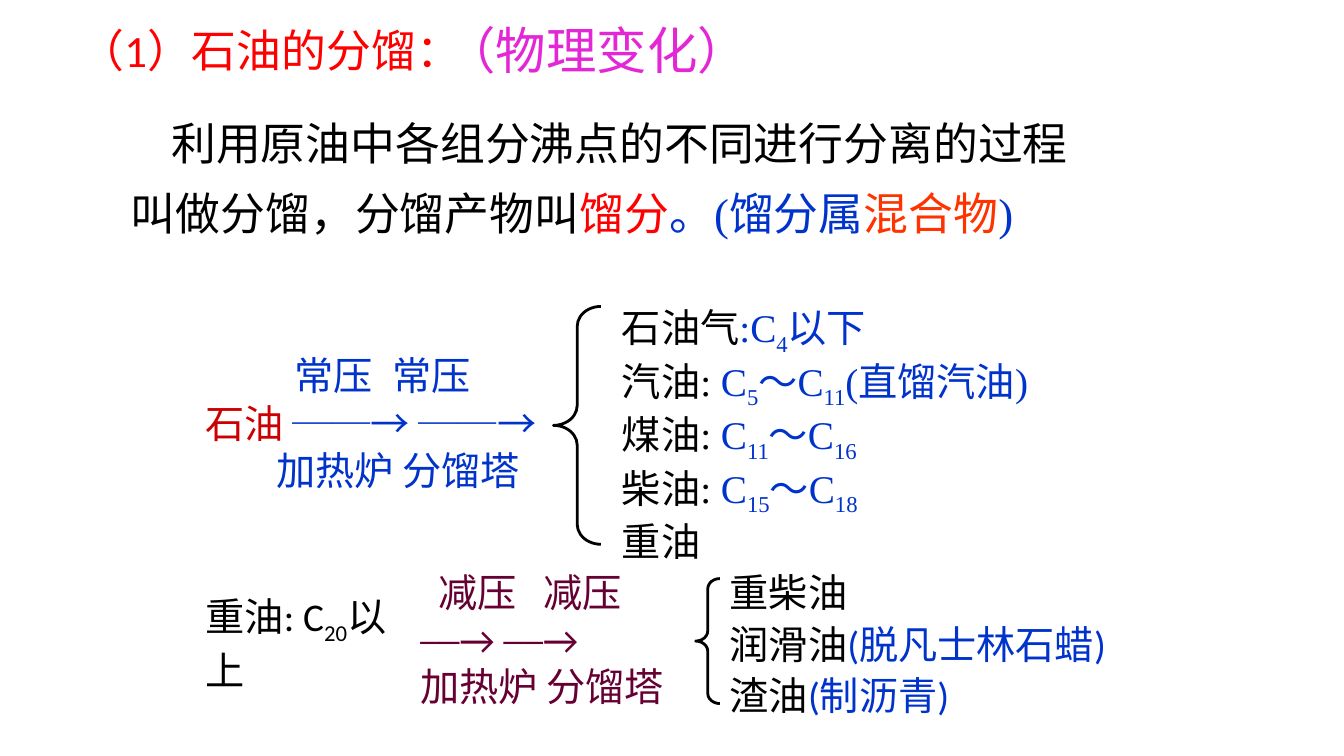
from lxml import etree
from pptx import Presentation
from pptx.dml.color import RGBColor
from pptx.enum.shapes import MSO_SHAPE
from pptx.oxml.ns import qn
from pptx.util import Emu, Pt

PX = 9144  # 100 px to the inch
BLACK = RGBColor(0x00, 0x00, 0x00)
BLUE = RGBColor(0x00, 0x33, 0xCC)
RED = RGBColor(0xFF, 0x00, 0x00)
DARK = RGBColor(0xCC, 0x00, 0x00)
ORANGE = RGBColor(0xFF, 0x33, 0x00)
PLUM = RGBColor(0x66, 0x00, 0x33)
PINK = RGBColor(0xE3, 0x27, 0xD6)
SANS, SERIF = "Calibri", "Times New Roman"


def write(par, text, size=28, color=BLACK, font=SANS, sub=False):
    run = par.add_run()
    run.text = text
    run.font.size = Pt(size)
    run.font.name = font
    run.font.color.rgb = color
    if sub:
        run.font._element.set("baseline", "-25000")


def set_tabs(par, stops):
    tabs = etree.SubElement(par._p.get_or_add_pPr(), qn("a:tabLst"))
    for stop in stops:
        etree.SubElement(tabs, qn("a:tab"), pos=str(stop * PX), algn="l")


deck = Presentation()
deck.slide_width, deck.slide_height = Emu(1333 * PX), Emu(750 * PX)
slide = deck.slides.add_slide(deck.slide_layouts[6])

for box in [(549, 304, 47, 236), (690, 574, 24, 124)]:
    brace = slide.shapes.add_shape(MSO_SHAPE.LEFT_BRACE, *[Emu(n * PX) for n in box])
    brace.adjustments[0] = 0.42
    brace.adjustments[1] = 0.5
    brace.shadow.inherit = False
    brace.fill.background()
    brace.line.color.rgb = BLACK
    brace.line.width = Pt(2)

# Each block: box, size, font, line spacing, lines of (text, color[, font]).
# A text that starts with "_" is a subscript.
blocks = [
    ((69, 18, 412, 64), 32, SANS, 1, [[("（1）石油的分馏：", RED)]]),
    ((432, 14, 354, 71), 36, SANS, 1, [[("（物理变化）", PINK)]]),
    ((120, 94, 978, 150), 32, SANS, 1.3, [
        [("\t利用原油中各组分沸点的不同进行分离的过程叫做分馏，分馏产物叫", BLACK),
         ("馏分", RED), ("。", BLUE), ("(", BLUE, SERIF), ("馏分属", BLUE),
         ("混合物", ORANGE), (")", BLUE, SERIF)]]),
    ((607, 296, 525, 252), 28, SERIF, 1, [
        [("石油气", BLACK), (":C", BLUE), ("_4", BLUE), ("以下", BLUE)],
        [("汽油:", BLACK), (" C", BLUE), ("_5", BLUE), ("～C", BLUE),
         ("_11", BLUE), ("(直馏汽油)", BLUE)],
        [("煤油:", BLACK), (" C", BLUE), ("_11", BLUE), ("～C", BLUE), ("_16", BLUE)],
        [("柴油:", BLACK), (" C", BLUE), ("_15", BLUE), ("～C", BLUE), ("_18", BLUE)],
        [("重油", BLACK)]]),
    ((194, 344, 370, 151), 28, SANS, 1, [
        [("\t常压\t常压", BLUE)],
        [("石油 ", DARK), ("──→ ──→", BLUE)],
        [("\t加热炉 分馏塔", BLUE)]]),
    ((194, 583, 223, 104), 28, SANS, 1, [
        [("重油: C", BLACK), ("_20", BLACK), ("以上", BLACK)]]),
    ((407, 559, 323, 151), 28, SANS, 1, [
        [("\t减压\t减压", PLUM)], [("──→ ──→", PLUM)], [("加热炉 分馏塔", PLUM)]]),
    ((714, 554, 453, 165), 28, SANS, 1.1, [
        [("重柴油", BLACK)],
        [("润滑油", BLACK), ("(脱凡士林石蜡)", BLUE)],
        [("渣油", BLACK), ("(制沥青)", BLUE)]]),
]
stops = {"\t利": [40], "\t常": [88, 185], "\t加": [70], "\t减": [18, 122]}

for box, size, font, space, lines in blocks:
    frame = slide.shapes.add_textbox(*[Emu(n * PX) for n in box]).text_frame
    frame.word_wrap = True
    for i, line in enumerate(lines):
        par = frame.add_paragraph() if i else frame.paragraphs[0]
        par.line_spacing = space
        start = line[0][0][:2]
        if start in stops:
            set_tabs(par, stops[start])
        for text, color, *face in line:
            write(par, text.lstrip("_"), size=size, color=color,
                  font=face[0] if face else font, sub=text.startswith("_"))

deck.save("out.pptx")
